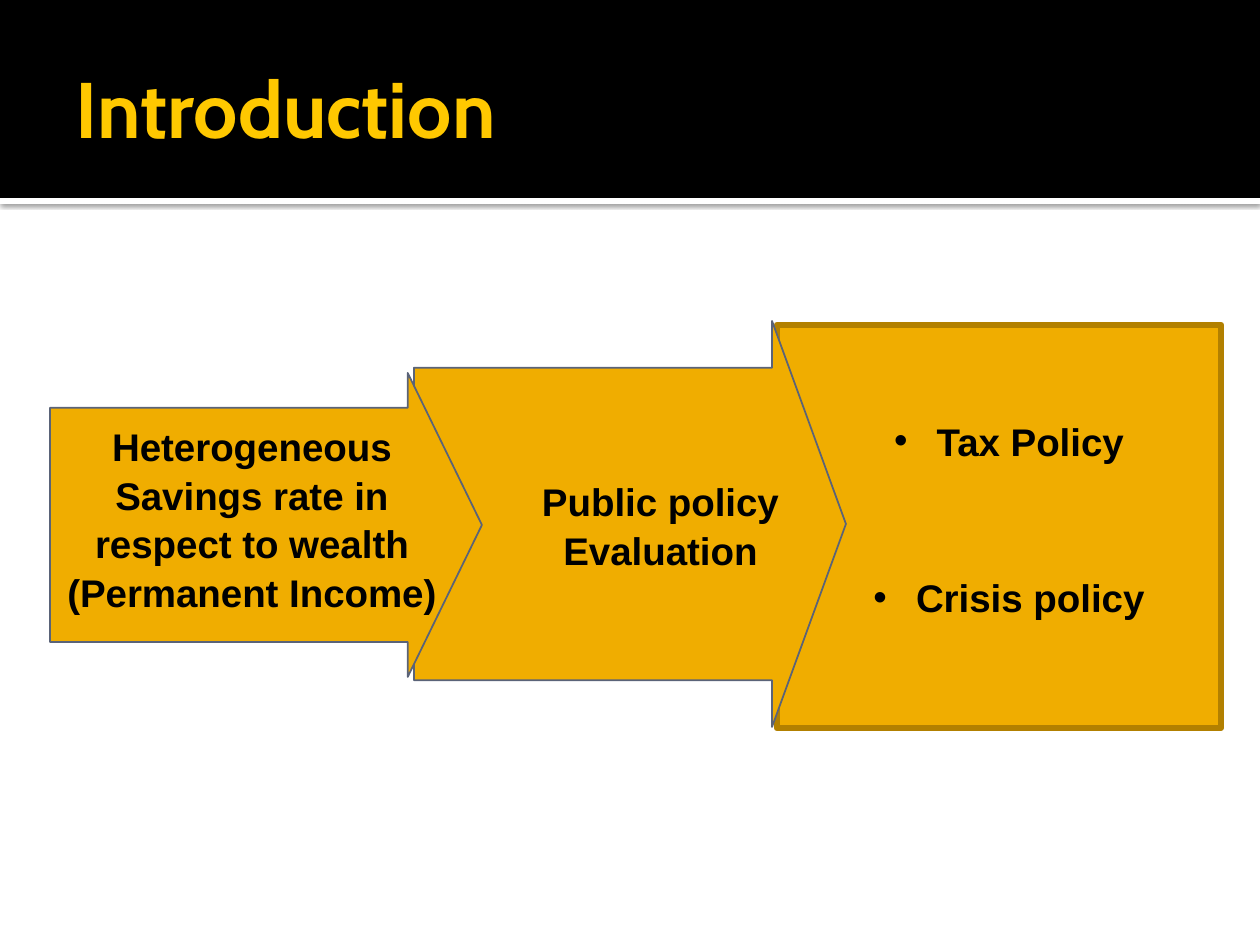
from dataclasses import dataclass
from lxml.etree import SubElement
from pptx import Presentation
from pptx.dml.color import RGBColor
from pptx.enum.shapes import MSO_SHAPE
from pptx.enum.text import MSO_ANCHOR, PP_ALIGN
from pptx.oxml.ns import qn
from pptx.util import Pt

PX = 914400 // 126


@dataclass(frozen=True)
class Theme:
    black: str = "000000"
    white: str = "FFFFFF"
    title: str = "FFC800"
    gold: str = "F0AD00"
    gold_edge: str = "B28000"
    slate: str = "5A6378"
    title_font: str = "Cabin"
    body_font: str = "Arial"
    title_size: int = 45
    body_size: int = 22


T = Theme()
TITLE = ("Introduction", (63, 21, 1134, 173))
STRIPE = (0, 198, 1260, 6)
BAND = (0, 0, 1260, 198)
POLICY_BOX = (777, 325, 444, 403)
ARROWS = [
    ((414, 321, 432, 406), 0.182),
    ((50, 373, 432, 304), 0.244),
]
LABELS = [
    ("Heterogeneous Savings rate in respect to wealth (Permanent Income)", (59, 420, 386, 196)),
    ("Public policy Evaluation", (493, 473, 335, 103)),
]
POLICIES = ([" Tax Policy", " Crisis policy"], (837, 411, 344, 214))
POLICY_GAP = 62
BULLET_INDENT = 32


def rgb(value):
    return RGBColor.from_string(value)


def emu(box):
    return [v * PX for v in box]


def add_shape(kind, box, fill, line=None, width=1):
    s = slide.shapes.add_shape(kind, *emu(box))
    s.shadow.inherit = False
    s.fill.solid()
    s.fill.fore_color.rgb = rgb(fill)
    if line:
        s.line.color.rgb = rgb(line)
        s.line.width = Pt(width)
    else:
        s.line.fill.background()
    return s


def add_text(lines, box, font, size, color, align, insets):
    s = slide.shapes.add_textbox(*emu(box))
    tf = s.text_frame
    tf.word_wrap = True
    tf.vertical_anchor = MSO_ANCHOR.MIDDLE
    tf.margin_left, tf.margin_top, tf.margin_right, tf.margin_bottom = emu(insets)
    tf.text = "\n".join(lines)
    for p in tf.paragraphs:
        p.alignment = align
        f = p.runs[0].font
        f.name, f.size, f.bold = font, Pt(size), True
        f.color.rgb = rgb(color)
    return tf


def add_label(lines, box):
    tf = add_text(lines, box, T.body_font, T.body_size, T.black, PP_ALIGN.CENTER, (5, 5, 5, 5))
    for p in tf.paragraphs:
        p.line_spacing = 1.05
    return tf


def add_bullet(p):
    pPr = p._p.get_or_add_pPr()
    pPr.set("marL", str(BULLET_INDENT * PX))
    pPr.set("indent", str(-BULLET_INDENT * PX))
    SubElement(pPr, qn("a:buFont"), typeface=T.body_font)
    SubElement(pPr, qn("a:buChar"), char="•")


def add_shadow(s):
    effects = s._element.spPr.find(qn("a:effectLst"))
    shadow = SubElement(effects, qn("a:outerShdw"), blurRad=str(Pt(2.5)),
                        dist=str(Pt(0.8)), dir="5400000", algn="tl", rotWithShape="0")
    color = SubElement(shadow, qn("a:srgbClr"), val=T.black)
    SubElement(color, qn("a:alpha"), val="60000")


prs = Presentation()
prs.slide_width, prs.slide_height = 1260 * PX, 945 * PX
slide = prs.slides.add_slide(prs.slide_layouts[6])

add_shadow(add_shape(MSO_SHAPE.RECTANGLE, STRIPE, T.white))
add_shape(MSO_SHAPE.RECTANGLE, BAND, T.black)
add_shape(MSO_SHAPE.RECTANGLE, POLICY_BOX, T.gold, T.gold_edge, 3.78)

text, box = TITLE
add_text([text], box, T.title_font, T.title_size, T.title, PP_ALIGN.LEFT, (13, 6, 6, 6))

for box, head in ARROWS:
    s = add_shape(MSO_SHAPE.RIGHT_ARROW, box, T.gold, T.slate)
    s.adjustments[0], s.adjustments[1] = 0.77, head

for text, box in LABELS:
    add_label([text], box)

first, second = add_label(*POLICIES).paragraphs
second.space_before = Pt(POLICY_GAP)
for p in (first, second):
    add_bullet(p)

prs.save("out.pptx")
